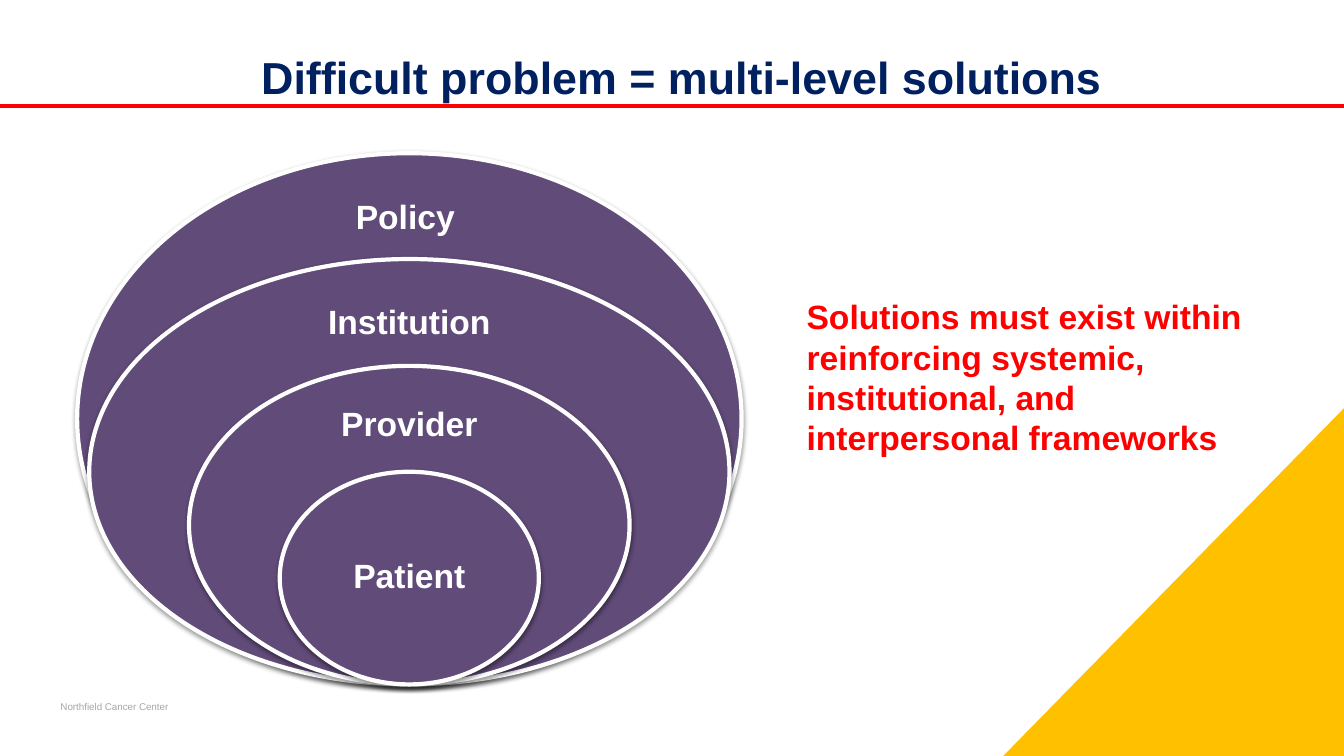
from lxml import etree
from pptx import Presentation
from pptx.dml.color import RGBColor
from pptx.enum.shapes import MSO_CONNECTOR, MSO_SHAPE
from pptx.enum.text import MSO_ANCHOR, MSO_AUTO_SIZE, PP_ALIGN
from pptx.oxml import parse_xml
from pptx.oxml.ns import nsdecls, qn
from pptx.util import Inches, Pt

STRAIGHT = MSO_CONNECTOR.STRAIGHT
OVAL, RIGHT_TRIANGLE = MSO_SHAPE.OVAL, MSO_SHAPE.RIGHT_TRIANGLE
TOP, MIDDLE, BOTTOM = MSO_ANCHOR.TOP, MSO_ANCHOR.MIDDLE, MSO_ANCHOR.BOTTOM
LEFT, CENTER = PP_ALIGN.LEFT, PP_ALIGN.CENTER
NO_FIT = MSO_AUTO_SIZE.NONE

COLORS = {
    "navy": "002060",
    "red": "FF0000",
    "gold": "FFC000",
    "purple": "614B79",
    "white": "FFFFFF",
    "gray": "A6A6A6",
}
SHADOW = (
    f'<a:outerShdw {nsdecls("a")} blurRad="39370" dist="20320" dir="5400000" rotWithShape="0">'
    '<a:srgbClr val="000000"><a:alpha val="38000"/></a:srgbClr></a:outerShdw>'
)


def color(name):
    return RGBColor.from_string(COLORS[name])


def write(text, at, box=None, size=24, tint="white", bold=True,
          align=LEFT, anchor=TOP, spacing=1.0):
    left, top, width, height = map(Inches, at)
    if box is None:
        box = page.shapes.add_textbox(left, top, width, height)
    box.left, box.top, box.width, box.height = left, top, width, height
    frame = box.text_frame
    frame.word_wrap = True
    frame.auto_size = NO_FIT
    frame.vertical_anchor = anchor
    frame.margin_left = frame.margin_right = 0
    frame.margin_top = frame.margin_bottom = 0
    para = frame.paragraphs[0]
    para.alignment = align
    para.line_spacing = spacing
    span = para.add_run()
    span.text = text
    span.font.name = "Arial"
    span.font.size = Pt(size)
    span.font.bold = bold
    span.font.color.rgb = color(tint)


deck = Presentation()
deck.slide_width = Inches(13.33)
deck.slide_height = Inches(7.5)
page = deck.slides.add_slide(deck.slide_layouts[5])

corner = page.shapes.add_shape(
    RIGHT_TRIANGLE, Inches(9.95), Inches(4.05), Inches(3.38), Inches(3.45))
corner.shadow.inherit = False
corner.fill.solid()
corner.fill.fore_color.rgb = color("gold")
corner.line.fill.background()
corner._element.spPr.find(qn("a:xfrm")).set("flipH", "1")

write("Northfield Cancer Center", (0.6, 6.95, 8.11, 0.12),
      size=7, tint="gray", bold=False, anchor=BOTTOM)
write("Difficult problem = multi-level solutions", (2.59, 0.09, 10.7, 0.94),
      box=page.shapes.title, size=32, tint="navy", anchor=BOTTOM, spacing=0.9)

rule = page.shapes.add_connector(STRAIGHT, 0, Inches(1.05), deck.slide_width, Inches(1.05))
rule.line.color.rgb = color("red")
rule.line.width = Pt(2.75)
etree.SubElement(rule._element.spPr, qn("a:effectLst"))

center_x, base_y = 4.06, 6.79
levels = [
    ("Policy", 6.59, 5.27, 4.02, 2.17),
    ("Institution", 6.35, 4.22, center_x, 3.21),
    ("Provider", 4.37, 3.16, center_x, 4.22),
    ("Patient", 2.57, 2.11, center_x, 5.73),
]
label_width, label_height = 2.2, 0.8
for name, width, height, label_x, label_y in levels:
    ring = page.shapes.add_shape(
        OVAL, Inches(center_x - width / 2), Inches(base_y - height),
        Inches(width), Inches(height))
    ring.fill.solid()
    ring.fill.fore_color.rgb = color("purple")
    ring.line.color.rgb = color("white")
    ring.line.width = Pt(3)
    ring.shadow.inherit = False
    ring._element.spPr.find(qn("a:effectLst")).append(parse_xml(SHADOW))
    write(name,
          (label_x - label_width / 2, label_y - label_height / 2, label_width, label_height),
          align=CENTER, anchor=MIDDLE, spacing=0.9)

write("Solutions must exist within reinforcing systemic, institutional, "
      "and interpersonal frameworks", (8, 2.94, 4.72, 1.62), tint="red")

deck.save("out.pptx")
